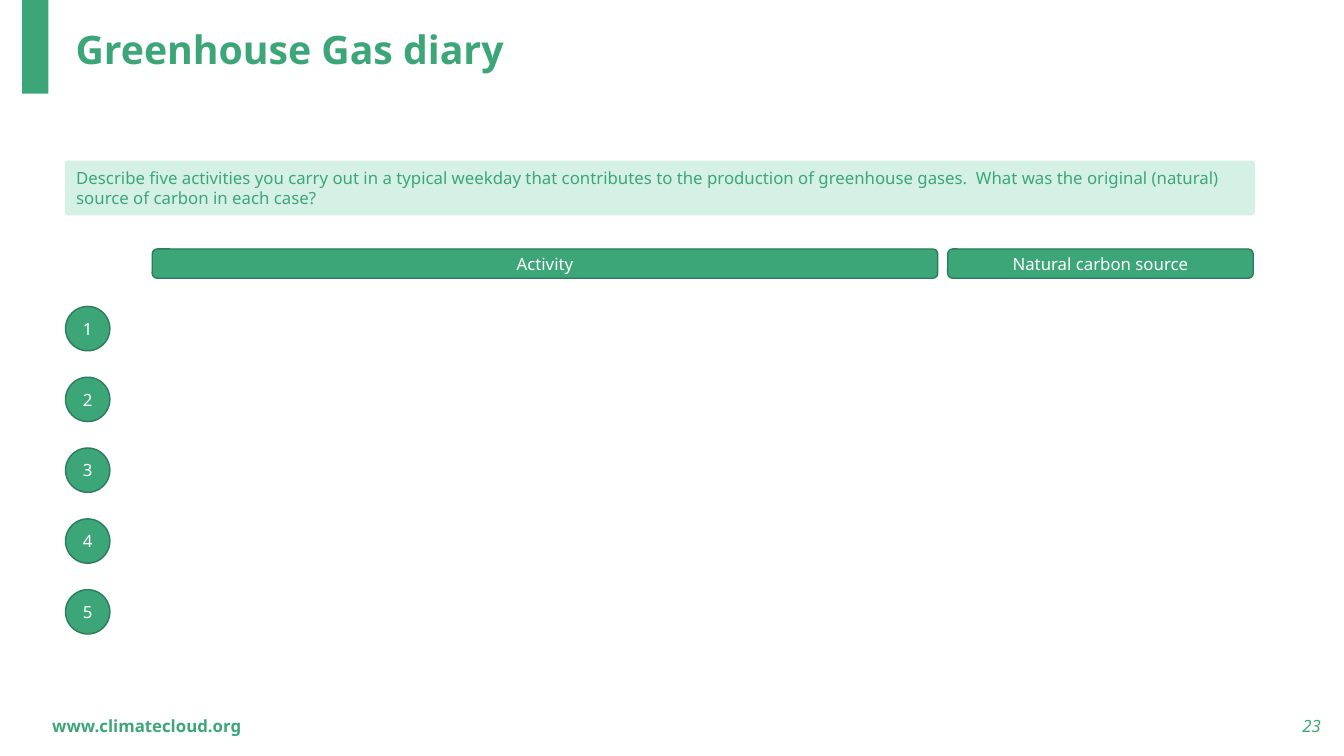
import pptx
import pptx.util
import pptx.dml.color
import pptx.enum.shapes
import pptx.enum.text
from dataclasses import dataclass

TITLE = "Greenhouse Gas diary"
TASK = (
    "Describe five activities you carry out in a typical weekday that "
    "contributes to the production of greenhouse gases.  What was the "
    "original (natural) source of carbon in each case?"
)
HEADS = [("Activity", 7.79), ("Natural carbon source", 3.03)]
ROWS = ["1", "2", "3", "4", "5"]
SITE = "www.climatecloud.org"
PAGE = "23"


@dataclass(frozen=True)
class Theme:
    font: str = "Noto Sans"
    green: str = "3CA679"
    dark: str = "2C7B5A"
    pale: str = "D5F0E5"
    white: str = "FFFFFF"
    head: int = 28
    body: int = 12


LOOK = Theme()
WIDE, HIGH = 13.33, 7.5
LEFT, RIGHT = 0.65, 12.44
TABLE, GAP = 1.51, 0.1
FIRST, LAST, DISC = 3.04, 5.85, 0.44

Inch = pptx.util.Inches
Kind = pptx.enum.shapes.MSO_SHAPE
Align = pptx.enum.text.PP_ALIGN


def paint(color):
    return pptx.dml.color.RGBColor.from_string(color)


def write(shape, text, color=LOOK.green, size=LOOK.body, align=Align.LEFT,
          bold=False, italic=False):
    frame = shape.text_frame
    frame.word_wrap = True
    frame.auto_size = pptx.enum.text.MSO_AUTO_SIZE.NONE
    frame.vertical_anchor = pptx.enum.text.MSO_ANCHOR.MIDDLE
    para = frame.paragraphs[0]
    para.alignment = align
    run = para.add_run()
    run.text = text
    font = run.font
    font.name, font.size = LOOK.font, pptx.util.Pt(size)
    font.bold, font.italic = bold, italic
    font.color.rgb = paint(color)
    return para


def block(slide, kind, box, fill, edge=None):
    shape = slide.shapes.add_shape(kind, *map(Inch, box))
    shape.shadow.inherit = False
    shape.fill.solid()
    shape.fill.fore_color.rgb = paint(fill)
    if edge:
        shape.line.color.rgb = paint(edge)
        shape.line.width = pptx.util.Pt(1)
    else:
        shape.line.fill.background()
    return shape


def label(slide, box, text, **style):
    write(slide.shapes.add_textbox(*map(Inch, box)), text, **style)


def badge(slide, kind, box, text):
    """Draw a green shape with centred white text."""
    shape = block(slide, kind, box, LOOK.green, LOOK.dark)
    write(shape, text, LOOK.white, align=Align.CENTER)


def main():
    deck = pptx.Presentation()
    deck.slide_width, deck.slide_height = Inch(WIDE), Inch(HIGH)
    slide = deck.slides.add_slide(deck.slide_layouts[5])

    block(slide, Kind.RECTANGLE, (0.22, 0, 0.26, 0.93), LOOK.green)
    title = slide.shapes.title
    title.left, title.top, title.width, title.height = map(
        Inch, (LEFT, 0.13, 10.73, 0.76))
    write(title, TITLE, size=LOOK.head, bold=True).line_spacing = 0.9

    label(slide, (10.2, 7, 3, 0.4), PAGE, align=Align.RIGHT, italic=True)
    label(slide, (0.42, 7, 4.5, 0.4), SITE, bold=True)

    task = block(slide, Kind.ROUNDED_RECTANGLE,
                 (LEFT, 1.6, RIGHT - LEFT, 0.53), LOOK.pale, LOOK.pale)
    task.adjustments[0] = 0.05
    write(task, TASK)

    step = (LAST - FIRST) / (len(ROWS) - 1)
    for i, text in enumerate(ROWS):
        badge(slide, Kind.OVAL, (LEFT, FIRST + i * step, DISC, DISC), text)

    x = TABLE
    for text, width in HEADS:
        badge(slide, Kind.ROUNDED_RECTANGLE, (x, 2.47, width, 0.29), text)
        x += width + GAP

    deck.save("out.pptx")


if __name__ == "__main__":
    main()
